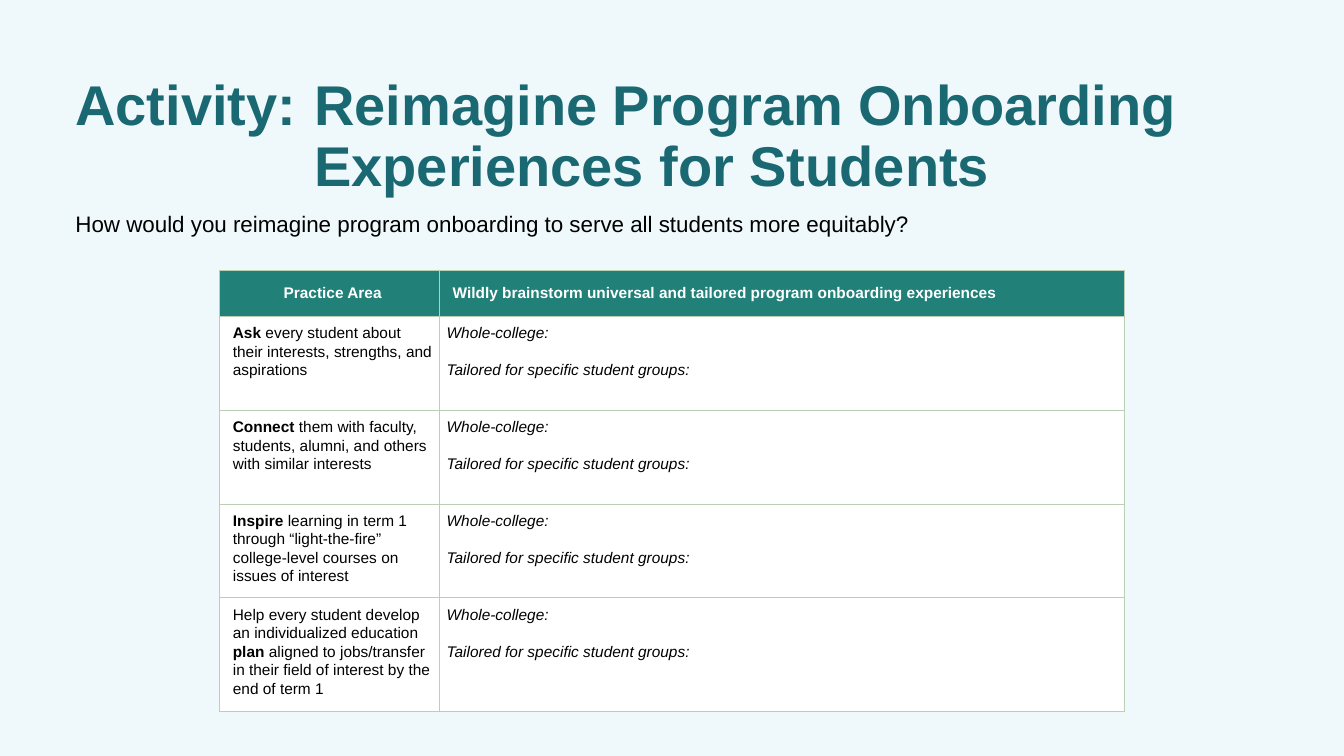
from pptx import Presentation
from pptx.dml.color import RGBColor
from pptx.enum.text import MSO_ANCHOR, PP_ALIGN
from pptx.oxml import parse_xml
from pptx.oxml.ns import nsdecls
from pptx.util import Inches, Pt

TOP, MIDDLE = MSO_ANCHOR.TOP, MSO_ANCHOR.MIDDLE
LEFT, CENTER = PP_ALIGN.LEFT, PP_ALIGN.CENTER

FONT = "Arial"
PALE, TEAL, DEEP = "EFF8FA", "218179", "196872"
WHITE, BLACK, SAGE = "FFFFFF", "000000", "B9D0B5"

COLS = [2.18, 6.79]
ROWS = [0.46, 0.93, 0.93, 0.93, 1.12]
HEADS = [
    ("Practice Area", CENTER),
    ("Wildly brainstorm universal and tailored program onboarding experiences", LEFT),
]
# Each area is a list of (text, bold) runs.
AREAS = [
    [("Ask", True),
     (" every student about their interests, strengths, and aspirations", False)],
    [("Connect", True),
     (" them with faculty, students, alumni, and others with similar interests", False)],
    [("Inspire", True),
     (" learning in term 1 through “light-the-fire” college-level courses"
      " on issues of interest", False)],
    [("Help every student develop an individualized education ", False),
     ("plan ", True),
     ("aligned to jobs/transfer in their field of interest by the end of term 1", False)],
]
PROMPTS = ["Whole-college:", "Tailored for specific student groups:"]


def color(code):
    return RGBColor.from_string(code)


def write(para, text, size=11, ink=BLACK, bold=False, italic=False):
    """Add one formatted run to a paragraph."""
    run = para.add_run()
    run.text = text
    font = run.font
    font.name, font.size = FONT, Pt(size)
    font.bold, font.italic = bold, italic
    font.color.rgb = color(ink)


def indent(para, left, first=0):
    props = para._p.get_or_add_pPr()
    props.set("marL", str(Inches(left)))
    props.set("indent", str(Inches(first)))


def add_box(slide, left, top, width, height, inset):
    """Add a wrapped text box and return its first paragraph."""
    box = slide.shapes.add_textbox(
        Inches(left), Inches(top), Inches(width), Inches(height))
    frame = box.text_frame
    frame.word_wrap = True
    frame.vertical_anchor = TOP
    frame.margin_top = frame.margin_bottom = Inches(inset)
    return frame.paragraphs[0]


def style(cell, fill, anchor):
    """Set the fill, margins and borders of a cell."""
    cell.vertical_anchor = anchor
    cell.margin_left = cell.margin_right = Inches(0.07)
    cell.margin_top = cell.margin_bottom = Inches(0.07)
    props = cell._tc.get_or_add_tcPr()
    for side in ("lnL", "lnR", "lnT", "lnB"):
        props.append(parse_xml(
            f'<a:{side} {nsdecls("a")} w="{Pt(0.75)}"><a:solidFill>'
            f'<a:srgbClr val="{SAGE}"/></a:solidFill></a:{side}>'))
    cell.fill.solid()
    cell.fill.fore_color.rgb = color(fill)


def fill_head(cell, text, align):
    style(cell, TEAL, MIDDLE)
    para = cell.text_frame.paragraphs[0]
    para.alignment = align
    indent(para, 0.06)
    write(para, text, ink=WHITE, bold=True)


def fill_area(cell, runs):
    style(cell, WHITE, TOP)
    para = cell.text_frame.paragraphs[0]
    para.line_spacing = 1.08
    indent(para, 0.06)
    for text, bold in runs:
        write(para, text, bold=bold)


def fill_prompts(cell):
    style(cell, WHITE, TOP)
    frame = cell.text_frame
    for num, text in enumerate(PROMPTS):
        para = frame.add_paragraph() if num else frame.paragraphs[0]
        para.line_spacing = 1.08
        if num:
            para.space_before = Pt(13.3)
        write(para, text, italic=True)


def add_grid(slide, left, top):
    grid = slide.shapes.add_table(
        len(ROWS), len(COLS), Inches(left), Inches(top),
        Inches(sum(COLS)), Inches(sum(ROWS))).table
    grid.horz_banding = False
    for col, width in zip(grid.columns, COLS):
        col.width = Inches(width)
    for row, height in zip(grid.rows, ROWS):
        row.height = Inches(height)
    for num, (text, align) in enumerate(HEADS):
        fill_head(grid.cell(0, num), text, align)
    for num, runs in enumerate(AREAS, 1):
        fill_area(grid.cell(num, 0), runs)
        fill_prompts(grid.cell(num, 1))


def main():
    deck = Presentation()
    deck.slide_width, deck.slide_height = Inches(13.33), Inches(7.5)
    slide = deck.slides.add_slide(deck.slide_layouts[6])
    slide.background.fill.solid()
    slide.background.fill.fore_color.rgb = color(PALE)

    title = add_box(slide, 0.65, 0.72, 12.03, 1.45, 0.05)
    title.line_spacing = 0.9
    indent(title, 2.37, -2.37)
    write(title, "Activity:\tReimagine Program Onboarding Experiences for Students",
          size=40, ink=DEEP, bold=True)

    ask = add_box(slide, 0.65, 1.95, 10.81, 0.47, 0.1)
    ask.line_spacing = 1.15
    write(ask, "How would you reimagine program onboarding to serve all students"
          " more equitably?", size=16)

    add_grid(slide, 2.18, 2.68)
    deck.save("out.pptx")


if __name__ == "__main__":
    main()
